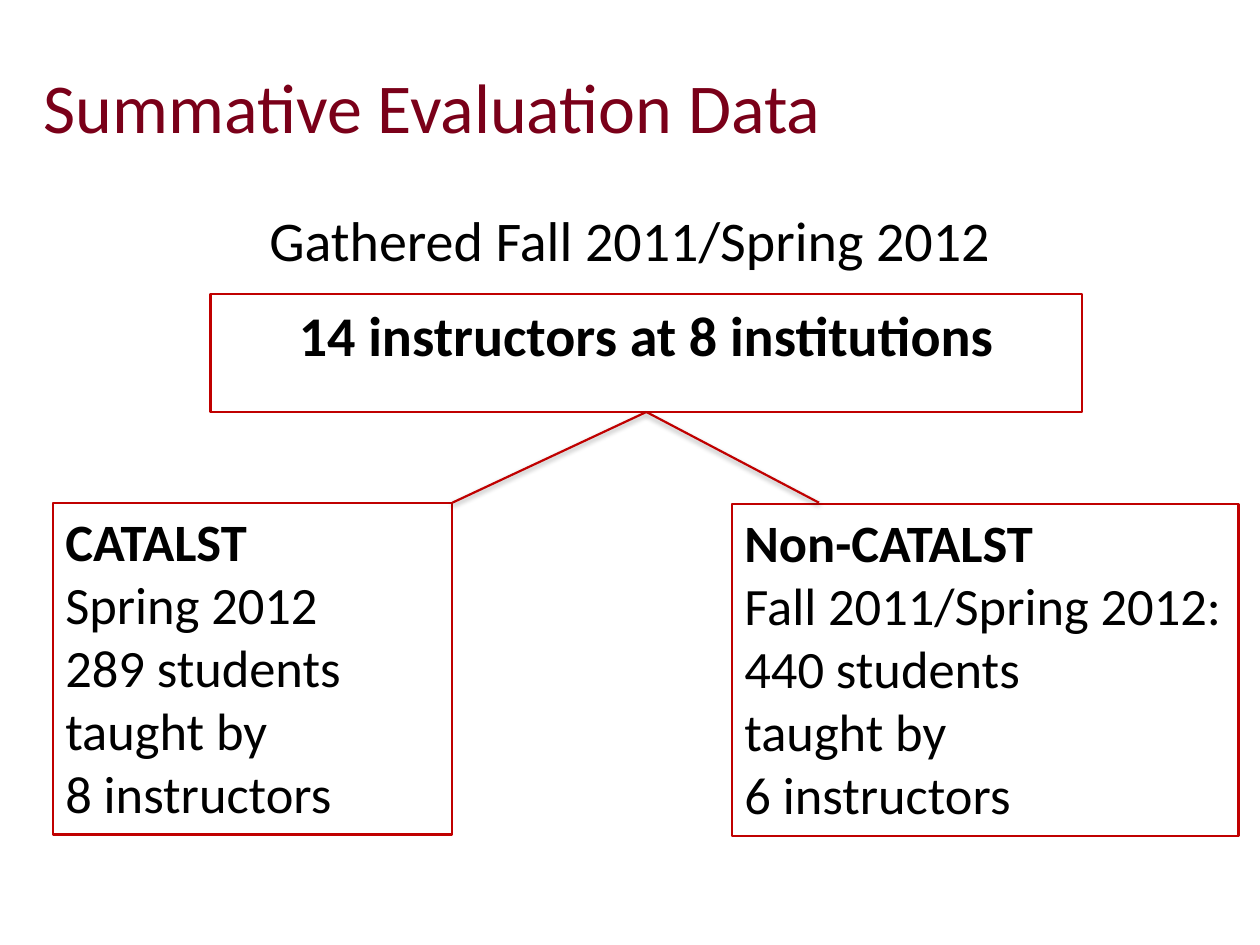
from dataclasses import dataclass

from lxml.etree import SubElement
from pptx import Presentation
from pptx.dml.color import RGBColor
from pptx.enum.shapes import MSO_CONNECTOR, MSO_SHAPE
from pptx.enum.text import MSO_ANCHOR, PP_ALIGN
from pptx.oxml.ns import qn
from pptx.slide import Slide
from pptx.util import Inches, Pt

WIDTH, HEIGHT = Inches(10), Inches(7.5)
FONT = "Calibri"
LINE_WIDTH = Pt(1.25)
COLORS = {"title": "7A0019", "text": "000000", "line": "C00000", "shadow": "000000"}


@dataclass(frozen=True)
class Box:
    left: float
    top: float
    width: float
    height: float
    lines: tuple[str, ...]
    size: float
    color: str = "text"
    bold_first: bool = False
    framed: bool = False
    align: PP_ALIGN = PP_ALIGN.LEFT
    anchor: MSO_ANCHOR = MSO_ANCHOR.TOP


def rgb(name: str) -> RGBColor:
    return RGBColor.from_string(COLORS[name])


def across(percent: float) -> int:
    return round(WIDTH * percent / 100)


def down(percent: float) -> int:
    return round(HEIGHT * percent / 100)


def draw_box(s: Slide, box: Box) -> None:
    place = across(box.left), down(box.top), across(box.width), down(box.height)
    if box.framed:
        sp = s.shapes.add_shape(MSO_SHAPE.RECTANGLE, *place)
        sp.shadow.inherit = False
        sp.fill.background()
        sp.line.color.rgb = rgb("line")
        sp.line.width = LINE_WIDTH
    else:
        sp = s.shapes.add_textbox(*place)
    tf = sp.text_frame
    tf.word_wrap = True
    tf.vertical_anchor = box.anchor
    for i, line in enumerate(box.lines):
        p = tf.add_paragraph() if i else tf.paragraphs[0]
        p.alignment = box.align
        r = p.add_run()
        r.text = line
        r.font.name = FONT
        r.font.size = Pt(box.size)
        r.font.bold = box.bold_first and i == 0
        r.font.color.rgb = rgb(box.color)


def draw_branch(s: Slide, parent: Box, x: float, y: float) -> None:
    cn = s.shapes.add_connector(
        MSO_CONNECTOR.STRAIGHT,
        across(parent.left + parent.width / 2),
        down(parent.top + parent.height),
        across(x),
        down(y),
    )
    cn.line.color.rgb = rgb("line")
    cn.line.width = LINE_WIDTH
    effects = SubElement(cn._element.spPr, qn("a:effectLst"))
    shadow = SubElement(
        effects, qn("a:outerShdw"), blurRad=str(Pt(3.1)), dist=str(Pt(1.6)),
        dir="5400000", rotWithShape="0",
    )
    color = SubElement(shadow, qn("a:srgbClr"), val=COLORS["shadow"])
    SubElement(color, qn("a:alpha"), val="38000")


TITLE = Box(2.5, 5.6, 95, 11.1, ("Summative Evaluation Data",), 40, "title",
            anchor=MSO_ANCHOR.MIDDLE)
BODY = Box(2.5, 21.1, 95, 64.4, ("Gathered Fall 2011/Spring 2012",), 32,
           align=PP_ALIGN.CENTER)
TOTAL = Box(16.7, 31.1, 69.2, 12.5, ("14 instructors at 8 institutions",), 32,
            bold_first=True, framed=True, align=PP_ALIGN.CENTER)
CATALST = Box(4.2, 53.2, 31.7, 35.1,
              ("CATALST", "Spring 2012", "289 students taught by", "8 instructors"),
              30, bold_first=True, framed=True)
NON_CATALST = Box(58.1, 53.35, 40.2, 35.1,
                  ("Non-CATALST", "Fall 2011/Spring 2012:", "440 students",
                   "taught by", "6 instructors"),
                  30, bold_first=True, framed=True)


def main() -> None:
    prs = Presentation()
    prs.slide_width, prs.slide_height = WIDTH, HEIGHT
    s = prs.slides.add_slide(prs.slide_layouts[6])
    for box in (TITLE, BODY, TOTAL, CATALST, NON_CATALST):
        draw_box(s, box)
    for x in (CATALST.left + CATALST.width, 65):
        draw_branch(s, TOTAL, x, CATALST.top)
    prs.save("out.pptx")


if __name__ == "__main__":
    main()
